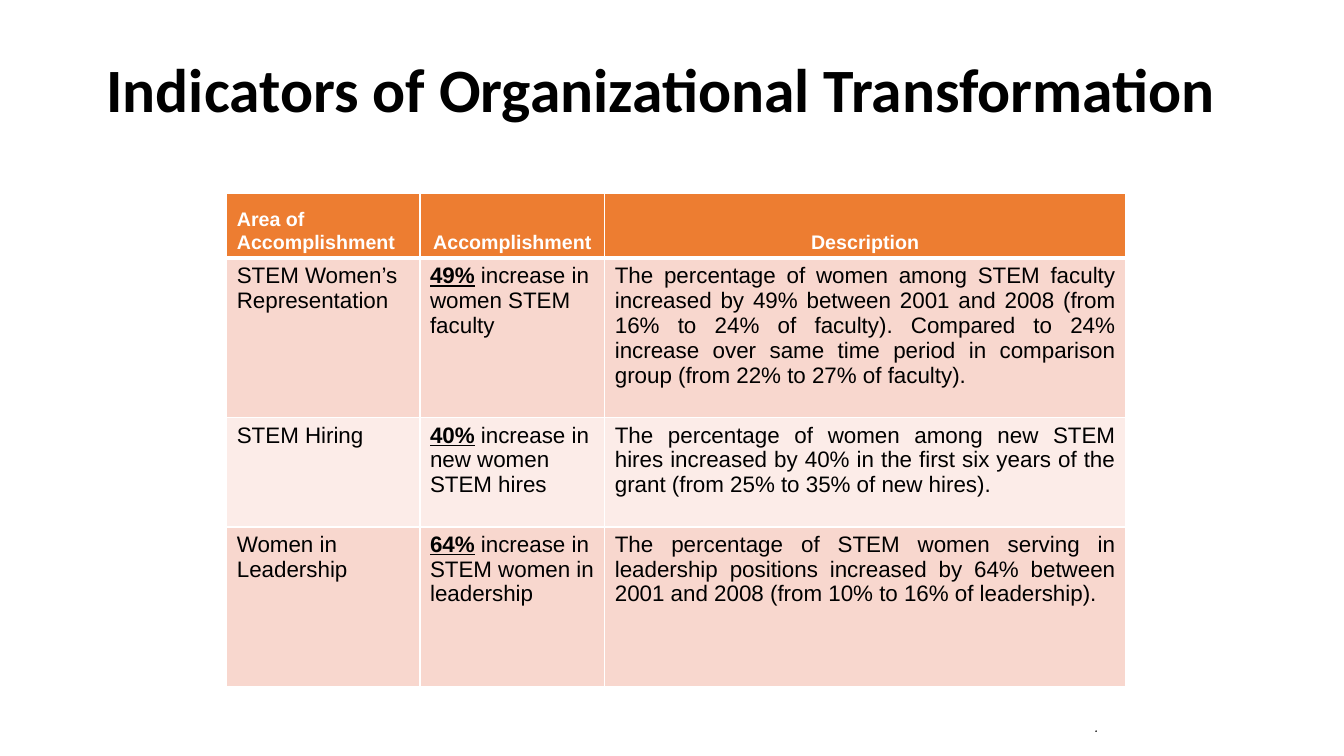
from lxml.etree import SubElement
from pptx import Presentation
from pptx.dml.color import RGBColor
from pptx.enum.text import MSO_ANCHOR, MSO_AUTO_SIZE, PP_ALIGN
from pptx.oxml.ns import qn
from pptx.util import Pt

BLACK = RGBColor(0x00, 0x00, 0x00)
WHITE = RGBColor(0xFF, 0xFF, 0xFF)
ORANGE = RGBColor(0xED, 0x7D, 0x31)
PINK = RGBColor(0xF8, 0xD7, 0xCE)
PALE = RGBColor(0xFC, 0xEC, 0xE8)


def add_run(para, text, size, color=BLACK, bold=False, face="Arial"):
    run = para.add_run()
    run.text = text
    run.font.name = face
    run.font.size = Pt(size)
    run.font.color.rgb = color
    run.font.bold = bold
    return run


def add_edges(cell, base):
    props = cell._tc.get_or_add_tcPr()
    for spot, side in enumerate(("lnL", "lnR", "lnT", "lnB")):
        width = base if side == "lnB" else 1
        line = SubElement(props, qn("a:" + side), w=str(Pt(width)))
        fill = SubElement(line, qn("a:solidFill"))
        SubElement(fill, qn("a:srgbClr"), val=str(WHITE))
        props.insert(spot, line)


deck = Presentation()
deck.slide_width, deck.slide_height = Pt(960), Pt(540)
slide = deck.slides.add_slide(deck.slide_layouts[6])

# Title
title = slide.shapes.add_textbox(Pt(60), Pt(24), Pt(825), Pt(84)).text_frame
title.word_wrap = True
title.vertical_anchor = MSO_ANCHOR.MIDDLE
para = title.paragraphs[0]
para.alignment = PP_ALIGN.CENTER
para.line_spacing = 0.9
add_run(para, "Indicators of Organizational Transformation", 44, bold=True, face="Calibri")

# Table frame
widths = (138, 132, 372)
heights = (46, 114, 78, 114)
table = slide.shapes.add_table(
    len(heights), len(widths), Pt(162), Pt(138.5), Pt(sum(widths)), Pt(sum(heights))
).table
for col, width in zip(table.columns, widths):
    col.width = Pt(width)
for row, height in zip(table.rows, heights):
    row.height = Pt(height)

# Header row
heads = (
    ("Area of Accomplishment", PP_ALIGN.LEFT),
    ("Accomplishment", PP_ALIGN.CENTER),
    ("Description", PP_ALIGN.CENTER),
)
for cell, (text, align) in zip(table.rows[0].cells, heads):
    cell.fill.solid()
    cell.fill.fore_color.rgb = ORANGE
    cell.vertical_anchor = MSO_ANCHOR.BOTTOM
    para = cell.text_frame.paragraphs[0]
    para.alignment = align
    add_run(para, text, 14, WHITE, True)
    add_edges(cell, 3)

# Body rows: area, share, gain, description
body = (
    ("STEM Women’s Representation", "49%", "increase in women STEM faculty",
     "The percentage of women among STEM faculty increased by 49% between 2001 and 2008 "
     "(from 16% to 24% of faculty). Compared to 24% increase over same time period in "
     "comparison group (from 22% to 27% of faculty)."),
    ("STEM Hiring", "40%", "increase in new women STEM hires",
     "The percentage of women among new STEM hires increased by 40% in the first six years "
     "of the grant (from 25% to 35% of new hires)."),
    ("Women in Leadership", "64%", "increase in STEM women in leadership",
     "The percentage of STEM women serving in leadership positions increased by 64% between "
     "2001 and 2008 (from 10% to 16% of leadership)."),
)
for num, (area, share, gain, about) in enumerate(body, 1):
    cells = list(table.rows[num].cells)
    for cell in cells:
        cell.fill.solid()
        cell.fill.fore_color.rgb = PINK if num % 2 else PALE
        add_edges(cell, 1)
    first, mid, last = (cell.text_frame.paragraphs[0] for cell in cells)
    add_run(first, area, 16)
    add_run(mid, share, 16, bold=True).font.underline = True
    add_run(mid, " ", 16, bold=True)
    add_run(mid, gain, 16)
    last.alignment = PP_ALIGN.JUSTIFY
    add_run(last, about, 16)

# Small dot at the foot
foot = slide.shapes.add_textbox(Pt(774.7), Pt(510), Pt(17.3), Pt(19.4)).text_frame
foot.word_wrap = False
foot.auto_size = MSO_AUTO_SIZE.SHAPE_TO_FIT_TEXT
para = foot.paragraphs[0]
para.alignment = PP_ALIGN.RIGHT
add_run(para, ".", 10).font.italic = True

deck.save("out.pptx")
